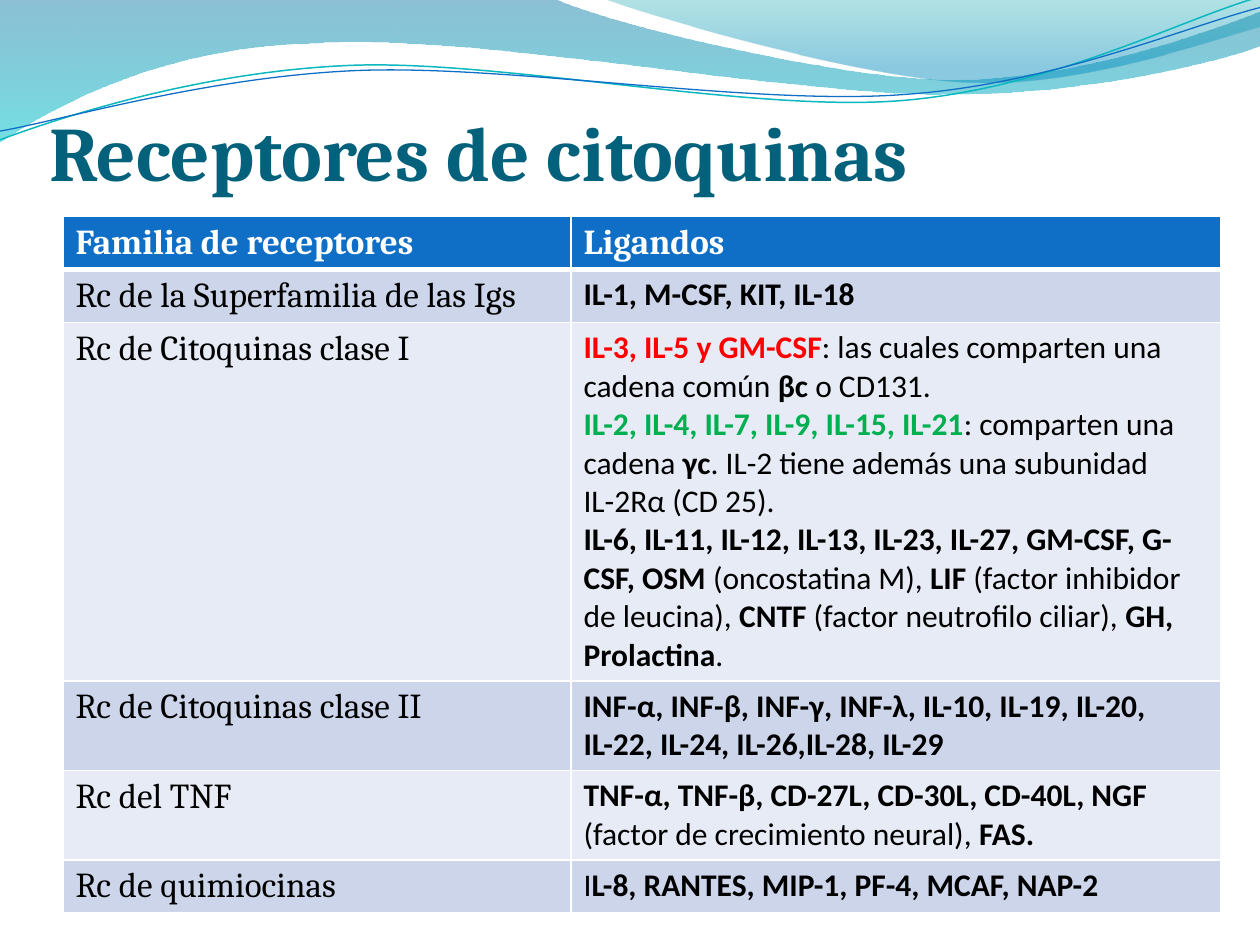
import math
from collections import namedtuple
from dataclasses import dataclass

import lxml.etree
import pptx
import pptx.dml.color
import pptx.enum.text
import pptx.oxml.ns
import pptx.util

Pt = pptx.util.Pt
qn = pptx.oxml.ns.qn
Box = namedtuple("Box", "left top width height")


@dataclass(frozen=True)
class Theme:
    heading_font: str = "Cambria"
    body_font: str = "Calibri"
    title_size: float = 44
    family_size: float = 20
    ligand_size: float = 18
    title: str = "04617B"
    header: str = "0F6FC6"
    white: str = "FFFFFF"
    black: str = "000000"
    red: str = "FF0000"
    green: str = "00B050"
    bands: tuple = ("CCD5EA", "E7EBF5")
    teal: str = "0AB8BF"
    left_wave: tuple = ((0, "0074A1", 45), (100, "00C6CF", 55))
    right_wave: tuple = ((0, "00A1A9", 30), (80, "008BBF", 45))


THEME = Theme()
TILT = 357.3

LEFT_WAVE = [
    [(0, 0)],
    [(316.8, -0.7)],
    [(342.7, 12.2), (478.1, 45.4), (545.8, 45.4)],
    [(614.2, 45.4), (689.8, 18.7), (720, 6.5)],
    [(720.7, 25.9)],
    [(707.8, 31.7), (626.4, 54.7), (537.1, 54)],
    [(447.8, 54), (275, 20.2), (185, 24.5)],
    [(92.9, 25.9), (33.1, 59.8), (-0.7, 81.4)],
    [(0, 0)],
]
RIGHT_WAVE = [
    [(344.9, -0.7)],
    [(366.5, 7.9), (491, 44.6), (553.7, 46.8)],
    [(616.3, 49.7), (691.9, 23), (720, 15.1)],
    [(720, 0)],
    [(344.9, -0.7)],
]
TEAL_LINE = [
    [(0, 79.9)],
    [(34.6, 67), (113.8, 41), (199.4, 37.4)],
    [(284.4, 33.8), (427, 64.1), (513.4, 57.6)],
    [(599.8, 51.1), (675.4, 10.8), (718.6, -1.4)],
]
BLUE_LINE = [
    [(0, 74.9)],
    [(33.8, 69.1), (118.1, 43.9), (203.8, 40.3)],
    [(290.2, 36.7), (429.8, 60.5), (516.2, 54)],
    [(601.9, 48.2), (677.5, 15.1), (720, 4.3)],
]

HEADERS = ("Familia de receptores", "Ligandos")
FAMILIES = [
    ("Rc de la Superfamilia de las Igs", [[("IL-1, M-CSF, KIT, IL-18", True)]]),
    ("Rc de Citoquinas clase I", [
        [("IL-3, IL-5 y GM-CSF", True, THEME.red),
         (": las cuales comparten una cadena común ", False),
         ("βc ", True), ("o CD131.", False)],
        [("IL-2, IL-4, IL-7, IL-9, IL-15, IL-21", True, THEME.green),
         (": comparten una cadena ", False), ("γc", True),
         (". IL-2 tiene además una subunidad IL-2Rα (CD 25).", False)],
        [("IL-6, IL-11, IL-12, IL-13, IL-23, IL-27, GM-CSF, G-CSF, OSM ", True),
         ("(oncostatina M), ", False), ("LIF", True),
         (" (factor inhibidor de leucina), ", False), ("CNTF", True),
         (" (factor neutrofilo ciliar), ", False),
         ("GH, Prolactina", True), (".", False)],
    ]),
    ("Rc de Citoquinas clase II", [
        [("INF-α, INF-β, INF-γ, INF-λ, IL-10, IL-19, IL-20, IL-22, IL-24, "
          "IL-26,IL-28, IL-29", True)],
    ]),
    ("Rc del TNF", [
        [("TNF-α, TNF-β, CD-27L, CD-30L, CD-40L, NGF ", True),
         ("(factor de crecimiento neural), ", False), ("FAS.", True)],
    ]),
    ("Rc de quimiocinas", [
        [("I", False), ("L-8, RANTES, MIP-1, PF-4, MCAF, NAP-2", True)],
    ]),
]


def rgb(value):
    return pptx.dml.color.RGBColor.from_string(value)


def add_text(para, text, *, font, size, color=THEME.black, bold=False):
    span = para.add_run()
    span.text = text
    span.font.name = font
    span.font.size = Pt(size)
    span.font.bold = bold
    span.font.color.rgb = rgb(color)


def turn(point, center, degrees):
    angle = math.radians(degrees)
    x, y = point[0] - center[0], point[1] - center[1]
    return (center[0] + x * math.cos(angle) - y * math.sin(angle),
            center[1] + x * math.sin(angle) + y * math.cos(angle))


def add_outline(slide, box, segments, closed=False, rotation=0):
    center = (359.3, 41.4)
    segments = [[turn(point, center, -rotation) for point in segment]
                for segment in segments]
    segments = [[(Pt(box.left + x), Pt(box.top + y)) for x, y in segment]
                for segment in segments]
    builder = slide.shapes.build_freeform(*segments[0][0])
    builder.add_line_segments([segment[-1] for segment in segments[1:]], close=closed)
    shape = builder.convert_to_shape()
    shape.shadow.inherit = False
    for edge, segment in zip(list(shape._element.iter(qn("a:lnTo"))), segments[1:]):
        if len(segment) == 3:
            curve = lxml.etree.Element(qn("a:cubicBezTo"))
            for x, y in segment:
                lxml.etree.SubElement(curve, qn("a:pt"), x=str(x - shape.left),
                                      y=str(y - shape.top))
            edge.getparent().replace(edge, curve)
    shape.rotation = rotation
    return shape


def fill_gradient(shape, stops):
    shape.fill.gradient()
    gradient = shape._element.spPr.find(qn("a:gradFill"))
    for child in list(gradient):
        gradient.remove(child)
    stop_list = lxml.etree.SubElement(gradient, qn("a:gsLst"))
    for position, color, opacity in stops:
        stop = lxml.etree.SubElement(stop_list, qn("a:gs"), pos=str(position * 1000))
        tint = lxml.etree.SubElement(stop, qn("a:srgbClr"), val=color)
        lxml.etree.SubElement(tint, qn("a:alpha"), val=str(opacity * 1000))
    lxml.etree.SubElement(gradient, qn("a:lin"), ang="5400000", scaled="0")


def add_waves(slide, box):
    for segments, stops in ((LEFT_WAVE, THEME.left_wave), (RIGHT_WAVE, THEME.right_wave)):
        wave = add_outline(slide, box, segments, closed=True)
        fill_gradient(wave, stops)
        wave.line.fill.background()
    for segments, color, width in ((TEAL_LINE, THEME.teal, 0.85),
                                   (BLUE_LINE, THEME.header, 0.75)):
        curve = add_outline(slide, box, segments, rotation=TILT)
        curve.fill.background()
        curve.line.color.rgb = rgb(color)
        curve.line.width = Pt(width)


def style_cell(cell, fill, top=1, bottom=1):
    cell.fill.solid()
    cell.fill.fore_color.rgb = rgb(fill)
    properties = cell._tc.get_or_add_tcPr()
    sides = (("L", 1), ("R", 1), ("T", top), ("B", bottom))
    for index, (side, width) in enumerate(sides):
        border = lxml.etree.Element(qn(f"a:ln{side}"), w=str(Pt(width)))
        solid = lxml.etree.SubElement(border, qn("a:solidFill"))
        lxml.etree.SubElement(solid, qn("a:srgbClr"), val=THEME.white)
        properties.insert(index, border)


def add_receptor_table(slide, box):
    frame = slide.shapes.add_table(len(FAMILIES) + 1, len(HEADERS),
                                   *(Pt(value) for value in box))
    table = frame.table
    family_width = 290.3
    table.columns[0].width = Pt(family_width)
    table.columns[1].width = Pt(box.width - family_width)
    for row in table.rows:
        row.height = Pt(29.2)
    frame.height = Pt(box.height)

    for cell, text in zip(table.rows[0].cells, HEADERS):
        style_cell(cell, THEME.header, bottom=3)
        add_text(cell.text_frame.paragraphs[0], text, font=THEME.heading_font,
                 size=THEME.family_size, color=THEME.white, bold=True)

    for index, (family, ligands) in enumerate(FAMILIES):
        family_cell, ligand_cell = table.rows[index + 1].cells
        for cell in (family_cell, ligand_cell):
            style_cell(cell, THEME.bands[index % 2], top=1 if index else 3)
        add_text(family_cell.text_frame.paragraphs[0], family,
                 font=THEME.heading_font, size=THEME.family_size)
        text_frame = ligand_cell.text_frame
        for number, spans in enumerate(ligands):
            para = text_frame.add_paragraph() if number else text_frame.paragraphs[0]
            for text, bold, *color in spans:
                add_text(para, text, font=THEME.body_font, size=THEME.ligand_size,
                         bold=bold, color=color[0] if color else THEME.black)


def place_title(slide, box, text):
    title = slide.shapes.title
    title.left, title.top, title.width, title.height = (Pt(value) for value in box)
    frame = title.text_frame
    frame.word_wrap = True
    frame.auto_size = pptx.enum.text.MSO_AUTO_SIZE.NONE
    frame.vertical_anchor = pptx.enum.text.MSO_ANCHOR.BOTTOM
    frame.margin_left = frame.margin_right = frame.margin_bottom = 0
    frame.margin_top = Pt(3.6)
    para = frame.paragraphs[0]
    para.alignment = pptx.enum.text.PP_ALIGN.LEFT
    add_text(para, text, font=THEME.heading_font, size=THEME.title_size,
             color=THEME.title, bold=True)
    slide.shapes._spTree.append(title._element)


def main():
    deck = pptx.Presentation()
    deck.slide_width, deck.slide_height = Pt(720), Pt(540)
    slide = deck.slides.add_slide(deck.slide_layouts[5])
    add_waves(slide, Box(0, 0, 720, 82))
    add_receptor_table(slide, Box(36, 123.7, 661.5, 396))
    place_title(slide, Box(28, 22.5, 648, 90), "Receptores de citoquinas")
    deck.save("out.pptx")


if __name__ == "__main__":
    main()
